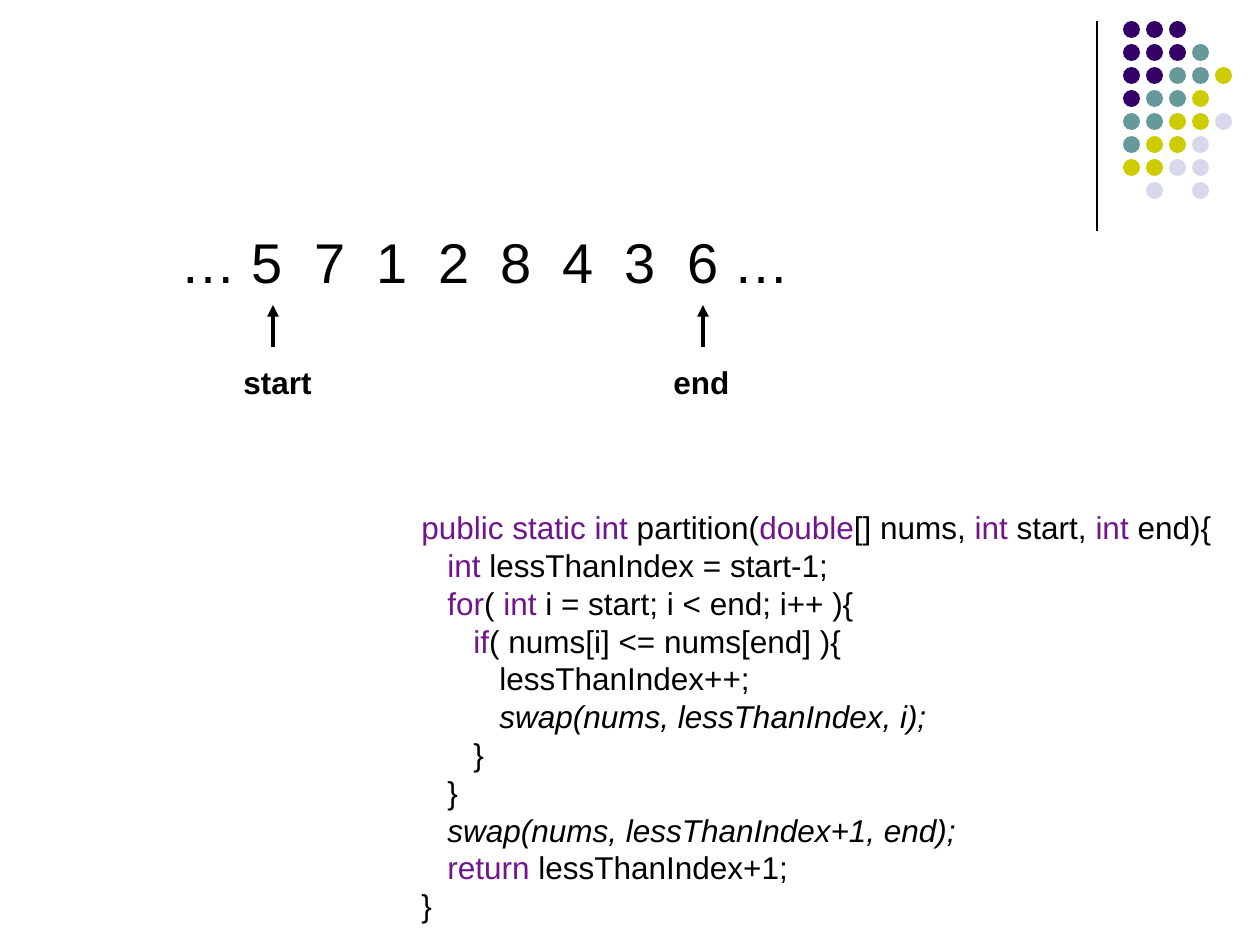
from lxml import etree
from pptx import Presentation
from pptx import util as u
from pptx.dml.color import RGBColor
from pptx.enum import shapes, text
from pptx.oxml.ns import qn

EMU_PER_PX = 914400 / 126
BLACK, KEYWORD = "000000", "70158B"
DOT_COLORS = {"P": "330066", "T": "669999", "Y": "CCCC00", "L": "D8D8EC"}
DOT_ROWS = ["PPP", "PPPT", "PPTTY", "PTTY", "TTYYL", "TYYL", "YYLL", " L L"]

# Indent level, italic, and the line with its keywords between backticks
CODE = [
    (0, False, "`public static int `partition(`double`[] nums, `int` start, `int` end){"),
    (1, False, "`int `lessThanIndex = start-1;"),
    (1, False, "`for`( `int `i = start; i < end; i++ ){"),
    (2, False, "`if`( nums[i] <= nums[end] ){"),
    (3, False, "lessThanIndex++;"),
    (3, True, "swap(nums, lessThanIndex, i);"),
    (2, False, "}"),
    (1, False, "}"),
    (1, True, "swap(nums, lessThanIndex+1, end);"),
    (1, False, "`return` lessThanIndex+1;"),
    (0, False, "}"),
]


def px(n):
    return u.Emu(round(n * EMU_PER_PX))


def rgb(color):
    return RGBColor.from_string(color)


def add_line(parent, x1, y1, x2, y2, width, arrow=False):
    c = parent.add_connector(shapes.MSO_CONNECTOR.STRAIGHT,
                             px(x1), px(y1), px(x2), px(y2))
    c.line.color.rgb = rgb(BLACK)
    c.line.width = u.Pt(width)
    if arrow:
        etree.SubElement(c.line._get_or_add_ln(), qn("a:tailEnd"), type="triangle")
    etree.SubElement(c._element.spPr, qn("a:effectLst"))


def add_text(parent, x, y, w, h, lines, size=18, bold=False):
    """Place lines of (indent level, italic, text with `keywords`)."""
    tf = parent.add_textbox(px(x), px(y), px(w), px(h)).text_frame
    tf.word_wrap = True
    tf.auto_size = text.MSO_AUTO_SIZE.SHAPE_TO_FIT_TEXT
    for i, (level, italic, line) in enumerate(lines):
        p = tf.add_paragraph() if i else tf.paragraphs[0]
        p.line_spacing = u.Pt(size * 1.2)
        if level:
            p._p.get_or_add_pPr().set("marL", str(px(26 * level)))
        for j, part in enumerate(line.split("`")):
            if not part:
                continue
            r = p.add_run()
            r.text = part
            r.font.name = "Arial"
            r.font.size = u.Pt(size)
            r.font.bold = bold
            r.font.italic = italic
            r.font.color.rgb = rgb(KEYWORD if j % 2 else BLACK)


def add_dots(s, x, y, pitch=23, size=17):
    group = s.shapes.add_group_shape().shapes
    for row, keys in enumerate(DOT_ROWS):
        for col, key in enumerate(keys):
            if key == " ":
                continue
            sp = group.add_shape(shapes.MSO_SHAPE.OVAL, px(x + col * pitch),
                                 px(y + row * pitch), px(size), px(size))
            sp.shadow.inherit = False
            sp.fill.solid()
            sp.fill.fore_color.rgb = rgb(DOT_COLORS[key])
            sp.line.fill.background()


def add_pointer(s, x, y, w, label):
    """Draw an upward arrow with its label below."""
    group = s.shapes.add_group_shape().shapes
    add_line(group, x + 42, y + 42, x + 42, y, 2.25, arrow=True)
    add_text(group, x, y + 52, w, 50, [(0, False, label)], bold=True)


def main():
    prs = Presentation()
    prs.slide_width, prs.slide_height = u.Inches(10), u.Inches(7.5)
    s = prs.slides.add_slide(prs.slide_layouts[6])
    add_line(s.shapes, 1097, 21, 1097, 231, 0.75)
    add_dots(s, 1123, 21)
    add_text(s.shapes, 168, 221, 651, 79,
             [(0, False, "… 5  7  1  2  8  4  3  6 …")], size=32)
    add_pointer(s, 231, 305, 168, "start")
    add_pointer(s, 661, 305, 95, "end")
    add_text(s.shapes, 409, 502, 840, 432, CODE)
    prs.save("out.pptx")


if __name__ == "__main__":
    main()
